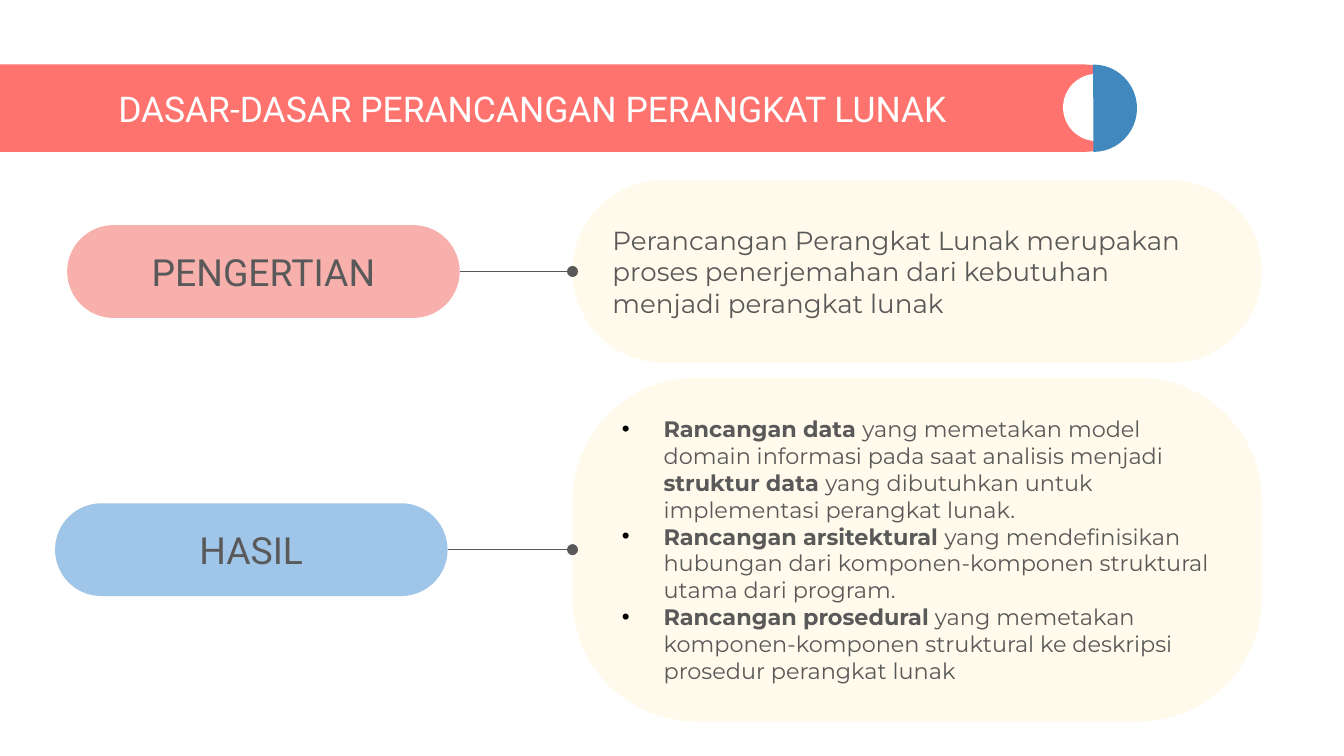
import pptx
import pptx.util
import pptx.dml.color
import pptx.enum.shapes
import pptx.enum.text
import pptx.oxml.ns
import lxml.etree

WIDTH = 10
HEIGHT = WIDTH * 9 / 16
COLORS = {"banner": "FF736E", "white": "FFFFFF", "half": "4088BE", "pink": "F8B0AD",
          "sky": "9FC5E8", "cream": "FFFAEB", "text": "595959", "bullet": "000000"}
TITLE = "DASAR-DASAR PERANCANGAN PERANGKAT LUNAK"
ROWS = [
    {"label": "PENGERTIAN", "color": "pink", "left": 0.5, "top": 1.34, "height": 1.36,
     "corner": 0.5, "size": 14, "bullets": False, "paragraphs": [
         [("Perancangan Perangkat Lunak merupakan proses penerjemahan dari kebutuhan "
           "menjadi perangkat lunak", False)]]},
    {"label": "HASIL", "color": "sky", "left": 0.41, "top": 2.81, "height": 2.56,
     "corner": 0.36, "size": 12, "bullets": True, "paragraphs": [
         [("Rancangan data ", True),
          ("yang memetakan model domain informasi pada saat analisis menjadi ", False),
          ("struktur data ", True),
          ("yang dibutuhkan untuk implementasi perangkat lunak.", False)],
         [("Rancangan arsitektural ", True),
          ("yang mendefinisikan hubungan dari komponen-komponen struktural utama "
           "dari program.", False)],
         [("Rancangan prosedural", True),
          (" yang memetakan komponen-komponen struktural ke deskripsi prosedur "
           "perangkat lunak", False)]]},
]
LABEL_WIDTH, LABEL_HEIGHT = 2.92, 0.69
CARD_LEFT, CARD_WIDTH = 4.26, 5.13
BANNER_TOP, BANNER_HEIGHT = 0.48, 0.65
INDENT = 0.31

inches = pptx.util.Inches
kinds = pptx.enum.shapes.MSO_SHAPE
alignments = pptx.enum.text.PP_ALIGN
qn = pptx.oxml.ns.qn


def color(name):
    return pptx.dml.color.RGBColor.from_string(COLORS[name])


def add_shape(slide, kind, box, fill, adjustments=()):
    shape = slide.shapes.add_shape(kind, *map(inches, box))
    shape.shadow.inherit = False
    shape.fill.solid()
    shape.fill.fore_color.rgb = color(fill)
    shape.line.fill.background()
    for index, value in enumerate(adjustments):
        shape.adjustments[index] = value
    return shape


def set_frame(shape):
    frame = shape.text_frame
    frame.word_wrap = True
    frame.auto_size = pptx.enum.text.MSO_AUTO_SIZE.NONE
    frame.vertical_anchor = pptx.enum.text.MSO_ANCHOR.MIDDLE
    frame.margin_left = frame.margin_right = inches(0.1)
    frame.margin_top = frame.margin_bottom = inches(0.1)
    return frame


def format_paragraph(paragraph, font, size, fill, alignment=alignments.LEFT):
    paragraph.alignment = alignment
    paragraph.font.name = font
    paragraph.font.size = pptx.util.Pt(size)
    paragraph.font.color.rgb = color(fill)


def add_bullet(paragraph):
    properties = paragraph._p.get_or_add_pPr()
    properties.set("marL", str(inches(INDENT)))
    properties.set("indent", str(-inches(INDENT)))
    bullet_color = lxml.etree.Element(qn("a:buClr"))
    lxml.etree.SubElement(bullet_color, qn("a:srgbClr"), val=COLORS["bullet"])
    bullet_font = lxml.etree.Element(qn("a:buFont"), typeface="Arial")
    bullet = lxml.etree.Element(qn("a:buChar"), char="•")
    for index, element in enumerate((bullet_color, bullet_font, bullet)):
        properties.insert(index, element)


def add_banner(slide):
    add_shape(slide, kinds.ROUNDED_RECTANGLE, (-0.32, BANNER_TOP, 8.72, BANNER_HEIGHT),
              "banner", [0.5])
    add_shape(slide, kinds.OVAL, (7.91, 0.55, 0.5, 0.5), "white")
    half = add_shape(slide, kinds.PIE, (7.81, BANNER_TOP, BANNER_HEIGHT, BANNER_HEIGHT),
                     "half", [53.67, 162])
    half.rotation = 180
    title = slide.shapes.title
    title.left, title.top, title.width, title.height = map(inches, (0.78, 0.6, 6.97, 0.41))
    title.text = TITLE
    format_paragraph(set_frame(title).paragraphs[0], "Roboto", 19, "white")
    title.element.getparent().append(title.element)


def add_row(slide, row):
    middle = row["top"] + row["height"] / 2
    label = add_shape(slide, kinds.ROUNDED_RECTANGLE,
                      (row["left"], middle - LABEL_HEIGHT / 2, LABEL_WIDTH, LABEL_HEIGHT),
                      row["color"], [0.5])
    label.text_frame.text = row["label"]
    format_paragraph(set_frame(label).paragraphs[0], "Roboto", 20, "text", alignments.CENTER)

    card = add_shape(slide, kinds.ROUNDED_RECTANGLE,
                     (CARD_LEFT, row["top"], CARD_WIDTH, row["height"]),
                     "cream", [row["corner"]])
    frame = set_frame(card)
    for index, runs in enumerate(row["paragraphs"]):
        paragraph = frame.add_paragraph() if index else frame.paragraphs[0]
        for text, bold in runs:
            run = paragraph.add_run()
            run.text = text
            run.font.bold = bold
        format_paragraph(paragraph, "Montserrat", row["size"], "text")
        if row["bullets"]:
            add_bullet(paragraph)
    return row["left"] + LABEL_WIDTH, middle


def add_link(slide, start, middle):
    link = slide.shapes.add_connector(pptx.enum.shapes.MSO_CONNECTOR.STRAIGHT,
                                      *map(inches, (start, middle, CARD_LEFT, middle)))
    link.line.color.rgb = color("text")
    link.line.width = pptx.util.Pt(0.75)
    lxml.etree.SubElement(link.line._get_or_add_ln(), qn("a:tailEnd"), type="oval")
    lxml.etree.SubElement(link.element.spPr, qn("a:effectLst"))


def main():
    presentation = pptx.Presentation()
    presentation.slide_width, presentation.slide_height = inches(WIDTH), inches(HEIGHT)
    slide = presentation.slides.add_slide(presentation.slide_layouts[5])
    add_banner(slide)
    link_starts = [add_row(slide, row) for row in ROWS]
    for start, middle in link_starts:
        add_link(slide, start, middle)
    presentation.save("out.pptx")


if __name__ == "__main__":
    main()
